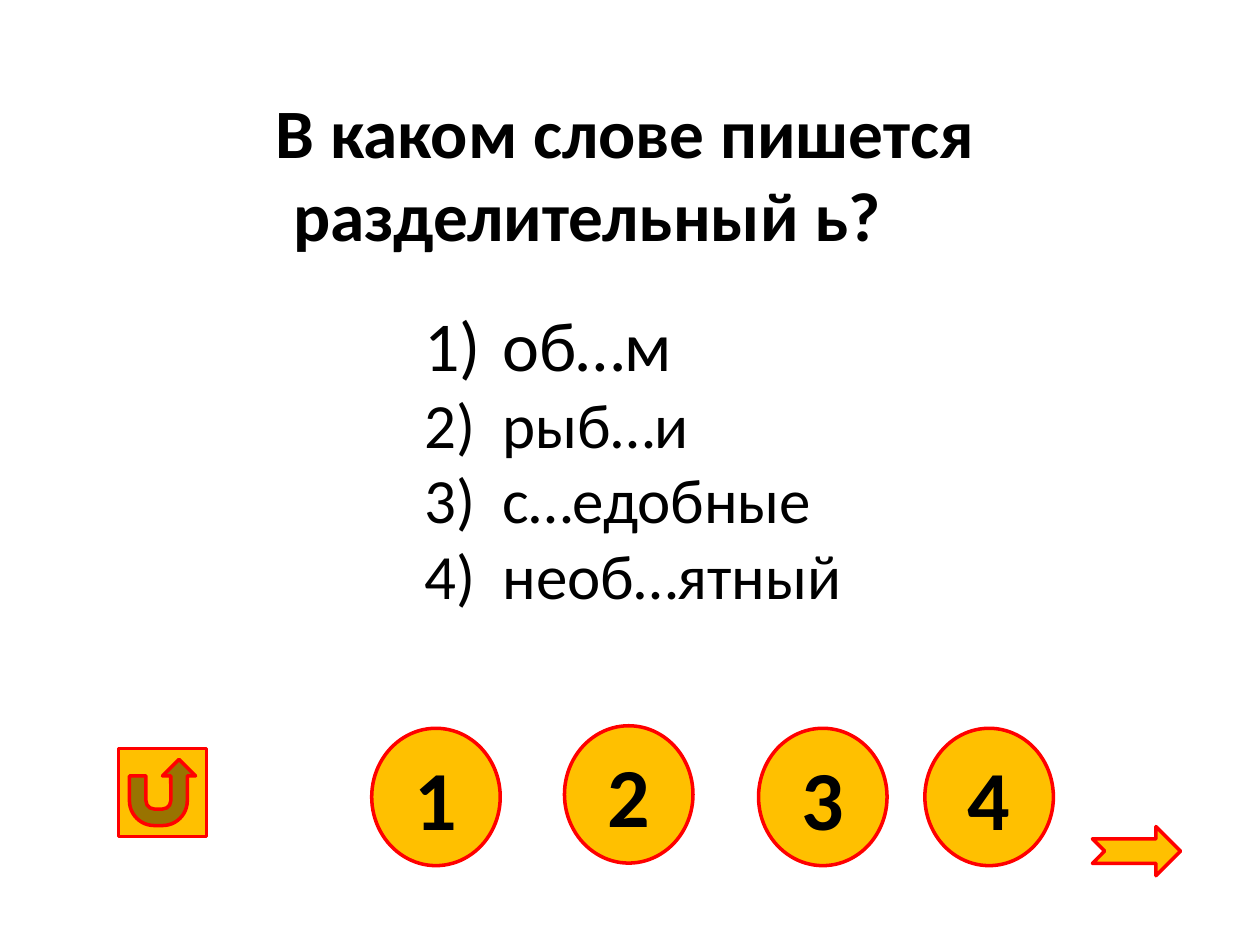
import pptx
import pptx.util
import pptx.dml.color
import pptx.enum.shapes
import pptx.enum.text
import pptx.oxml.ns
from lxml import etree

Inches = pptx.util.Inches
Pt = pptx.util.Pt
RGBColor = pptx.dml.color.RGBColor
Shape = pptx.enum.shapes.MSO_SHAPE
Align = pptx.enum.text.PP_ALIGN
Anchor = pptx.enum.text.MSO_ANCHOR

BLACK = RGBColor(0x00, 0x00, 0x00)
GOLD = RGBColor(0xFF, 0xC0, 0x00)
RED = RGBColor(0xFF, 0x00, 0x00)

QUESTION = [("В каком слове пишется", 0.6), ("разделительный ь?", 0)]
OPTIONS = [("об…м", 40), ("рыб…и", 36), ("с…едобные", 36), ("необ…ятный", 36)]
ANSWERS = [("1", 2.95, 5.78), ("2", 4.48, 5.76), ("3", 6.02, 5.78), ("4", 7.34, 5.78)]
NAVIGATION = [
    (Shape.ACTION_BUTTON_RETURN, 0.94, 5.94, 0.7, 0.7),
    (Shape.NOTCHED_RIGHT_ARROW, 8.67, 6.56, 0.7, 0.39),
]


def add_text_frame(slide, left, top, width, height):
    frame = slide.shapes.add_textbox(*map(Inches, (left, top, width, height))).text_frame
    frame.word_wrap = True
    return frame


def next_paragraph(frame, index):
    return frame.add_paragraph() if index else frame.paragraphs[0]


def style(paragraph, size, bold=False):
    font = paragraph.font
    font.name = "Calibri"
    font.size = Pt(size)
    font.bold = bold
    font.color.rgb = BLACK


def set_indent(paragraph, left, first=0):
    properties = paragraph._p.get_or_add_pPr()
    properties.set("marL", str(Inches(left)))
    properties.set("indent", str(Inches(first)))
    return properties


def add_button(slide, kind, left, top, width, height):
    button = slide.shapes.add_shape(kind, *map(Inches, (left, top, width, height)))
    button.shadow.inherit = False
    button.fill.solid()
    button.fill.fore_color.rgb = GOLD
    button.line.color.rgb = RED
    button.line.width = Pt(2)
    return button


def main():
    deck = pptx.Presentation()
    deck.slide_width = Inches(10)
    deck.slide_height = Inches(7.5)
    slide = deck.slides.add_slide(deck.slide_layouts[6])

    question = add_text_frame(slide, 0.62, 0.55, 8.08, 1.64)
    question.vertical_anchor = Anchor.MIDDLE
    for index, (text, indent) in enumerate(QUESTION):
        line = next_paragraph(question, index)
        line.text = text
        line.alignment = Align.CENTER
        set_indent(line, indent)
        style(line, 39.6, bold=True)

    options = add_text_frame(slide, 2.27, 2.34, 5.08, 2.58)
    for index, (text, size) in enumerate(OPTIONS):
        option = next_paragraph(options, index)
        option.text = text
        properties = set_indent(option, 1.62, -0.62)
        numbering = etree.SubElement(properties, pptx.oxml.ns.qn("a:buAutoNum"))
        numbering.set("type", "arabicParenR")
        style(option, size)

    for digit, left, top in ANSWERS:
        answer = add_button(slide, Shape.OVAL, left, top, 1.02, 1.09).text_frame
        answer.vertical_anchor = Anchor.MIDDLE
        label = answer.paragraphs[0]
        label.text = digit
        label.alignment = Align.CENTER
        style(label, 48, bold=True)

    for button in NAVIGATION:
        add_button(slide, *button)

    deck.save("out.pptx")


if __name__ == "__main__":
    main()
